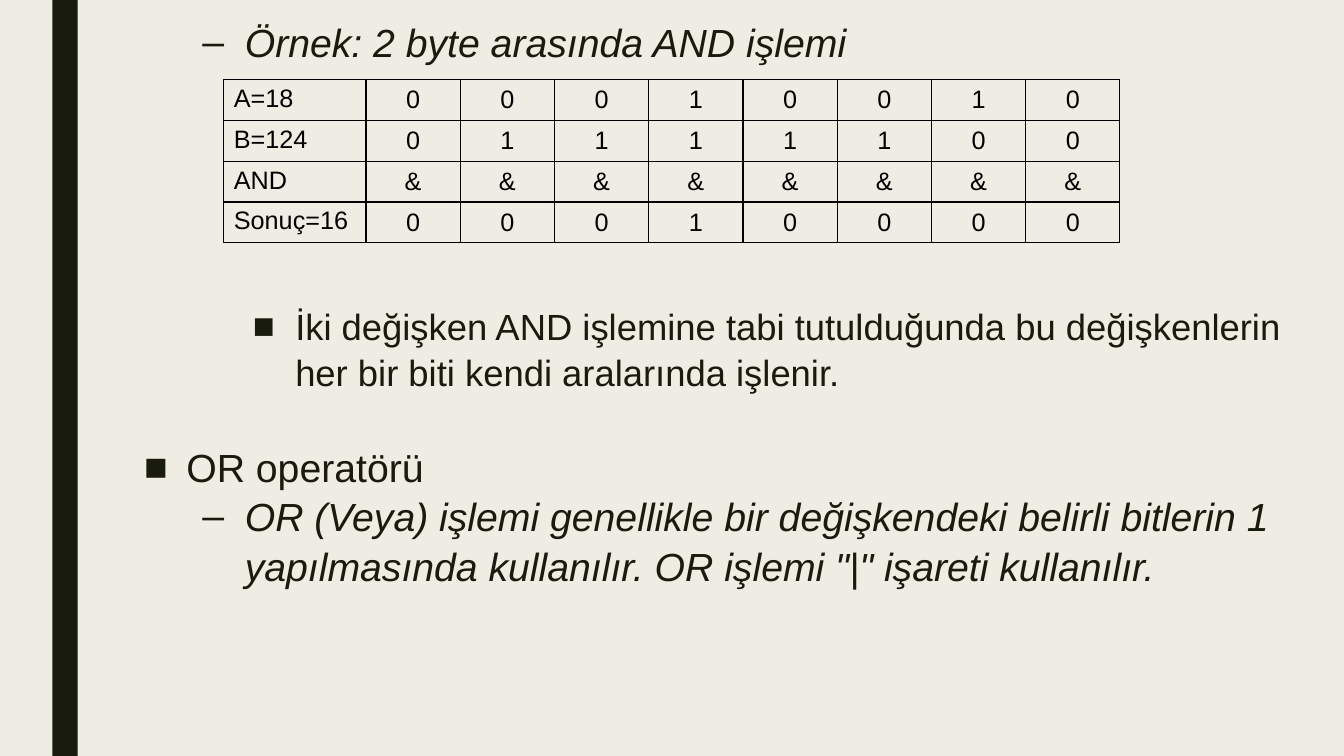
from lxml import etree
from pptx import Presentation
from pptx import util as u
from pptx.dml.color import RGBColor
from pptx.enum import shapes, text
from pptx.oxml.ns import qn

CREAM = RGBColor(0xEF, 0xED, 0xE3)
DARK = RGBColor(0x19, 0x1B, 0x0E)
BLACK = RGBColor(0, 0, 0)

BULLETS = ["■", "–", "■"]
INDENTS = [0.42, 1, 1.5]
HANGING = 0.42

# level, size, space before, wording
OUTLINE = [
    (1, 28, 0, "Örnek: 2 byte arasında AND işlemi"),
    (2, 26, 169, "İki değişken AND işlemine tabi tutulduğunda bu değişkenlerin "
                 "her bir biti kendi aralarında işlenir."),
    (0, 28, 33.8, "OR operatörü"),
    (1, 28, 0, "OR (Veya) işlemi genellikle bir değişkendeki belirli bitlerin 1 "
               "yapılmasında kullanılır. OR işlemi \"|\" işareti kullanılır."),
]
AND_ROWS = [
    ("A=18", "00010010"),
    ("B=124", "01111100"),
    ("AND", "&" * 8),
    ("Sonuç=16", "00010000"),
]


class SlideBuilder:
    font_name = "Arial"

    def __init__(self, slide):
        self.slide = slide
        slide.background.fill.solid()
        slide.background.fill.fore_color.rgb = CREAM

    def style(self, font, size, color, italic=False):
        font.name = self.font_name
        font.size = u.Pt(size)
        font.color.rgb = color
        font.italic = italic

    def bar(self, left, top, width, height):
        side_bar = self.slide.shapes.add_shape(
            shapes.MSO_SHAPE.RECTANGLE, u.Inches(left), u.Inches(top),
            u.Inches(width), u.Inches(height))
        side_bar.shadow.inherit = False
        side_bar.fill.solid()
        side_bar.fill.fore_color.rgb = DARK
        side_bar.line.fill.background()

    def outline(self, left, top, width, height, items):
        frame = self.slide.shapes.add_textbox(
            u.Inches(left), u.Inches(top),
            u.Inches(width), u.Inches(height)).text_frame
        frame.word_wrap = True
        for i, (level, size, before, wording) in enumerate(items):
            point = frame.add_paragraph() if i else frame.paragraphs[0]
            point.level = level
            point.line_spacing = 1.05
            point.space_before = u.Pt(before)
            props = point._p.get_or_add_pPr()
            props.set("marL", str(u.Inches(INDENTS[level])))
            props.set("indent", str(-u.Inches(HANGING)))
            etree.SubElement(props, qn("a:buFont"), typeface=self.font_name)
            etree.SubElement(props, qn("a:buChar"), char=BULLETS[level])
            run = point.add_run()
            run.text = wording
            self.style(run.font, size, DARK, italic=level == 1)

    def bit_table(self, left, top, width, height, label_width, rows):
        bits = len(rows[0][1])
        table = self.slide.shapes.add_table(
            len(rows), bits + 1, u.Inches(left), u.Inches(top),
            u.Inches(width), u.Inches(height)).table
        table.first_row = table.horz_banding = False
        for c, column in enumerate(table.columns):
            column.width = u.Inches((width - label_width) / bits if c else label_width)
        for r, (label, values) in enumerate(rows):
            for c, value in enumerate([label, *values]):
                self.cell(table.cell(r, c), value, centred=c > 0)

    def cell(self, cell, value, centred):
        self.borders(cell)
        cell.fill.background()
        entry = cell.text_frame.paragraphs[0]
        if centred:
            cell.vertical_anchor = text.MSO_ANCHOR.MIDDLE
            entry.alignment = text.PP_ALIGN.CENTER
        run = entry.add_run()
        run.text = value
        self.style(run.font, 18, BLACK)

    def borders(self, cell):
        props = cell._tc.get_or_add_tcPr()
        for side in ("lnL", "lnR", "lnT", "lnB"):
            edge = etree.SubElement(props, qn(f"a:{side}"), w=str(u.Pt(1)))
            fill = etree.SubElement(edge, qn("a:solidFill"))
            etree.SubElement(fill, qn("a:srgbClr"), val=str(BLACK))


def main():
    deck = Presentation()
    deck.slide_width, deck.slide_height = u.Inches(13.33), u.Inches(7.5)
    builder = SlideBuilder(deck.slides.add_slide(deck.slide_layouts[6]))

    # Side bar
    builder.bar(0.52, 0, 0.25, 7.5)
    # Outline, leaving room for the table under its first point
    builder.outline(1.33, 0.11, 11.71, 7.3, OUTLINE)
    # Bitwise AND worked example
    builder.bit_table(2.22, 0.79, 8.89, 1.62, 1.41, AND_ROWS)

    deck.save("out.pptx")


if __name__ == "__main__":
    main()
